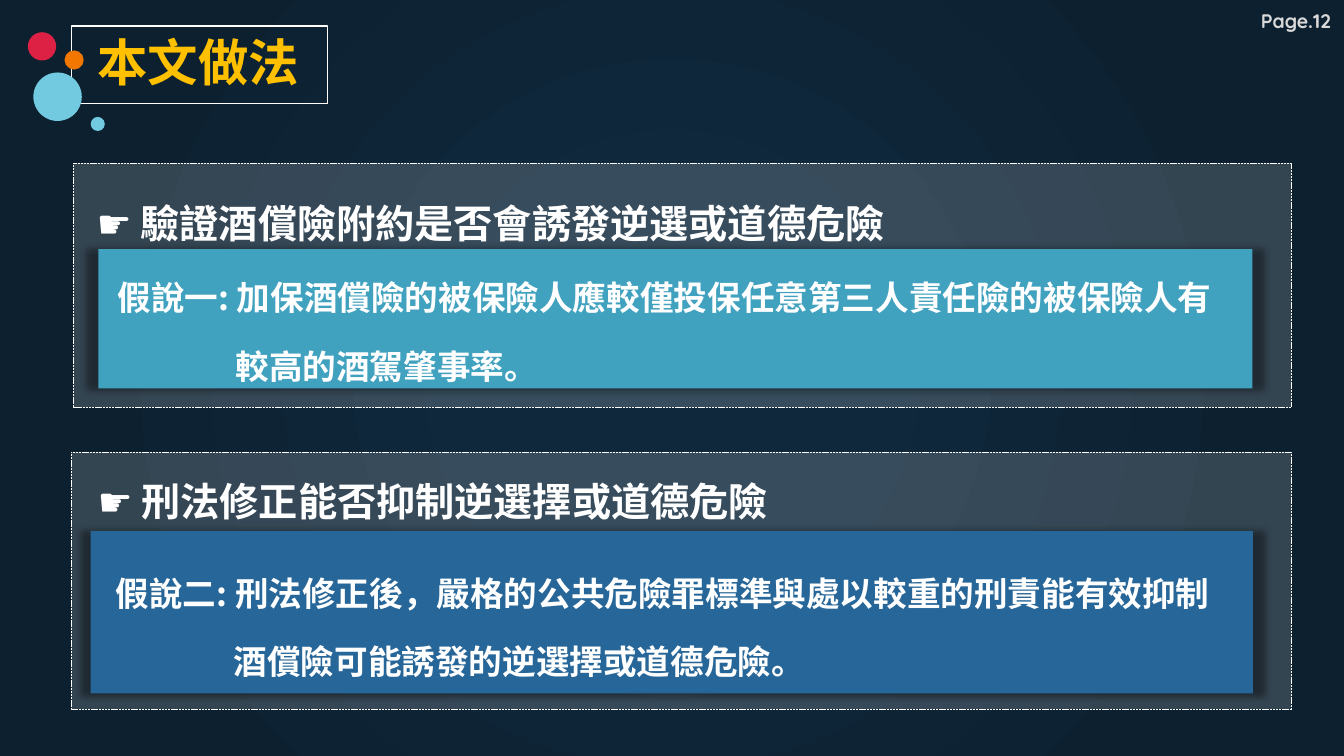
import pptx
import pptx.util
import pptx.dml.color
import pptx.enum.dml
import pptx.enum.shapes
import pptx.enum.text
import pptx.oxml
import pptx.oxml.ns

Pt = pptx.util.Pt
Kind = pptx.enum.shapes.MSO_SHAPE
Fit = pptx.enum.text.MSO_AUTO_SIZE
Dash = pptx.enum.dml.MSO_LINE
qn = pptx.oxml.ns.qn
SPACE = pptx.oxml.ns.nsdecls("a")


def color(code):
    return pptx.dml.color.RGBColor.from_string(code)


def node(text):
    return pptx.oxml.parse_xml(text)


class Pen:
    font = "Noto Sans CJK SC"
    white = "FFFFFF"

    def __init__(self, slide):
        self.slide = slide
        self.home = slide.shapes

    def group(self):
        self.home = self.slide.shapes.add_group_shape().shapes

    def ungroup(self):
        self.home = self.slide.shapes

    def back(self, stops):
        fill = self.slide.background.fill
        fill.solid()
        marks = "".join(
            f'<a:gs pos="{pos * 1000}"><a:srgbClr val="{code}"/></a:gs>'
            for pos, code in stops
        )
        grad = node(
            f'<a:gradFill {SPACE} rotWithShape="1"><a:gsLst>{marks}</a:gsLst>'
            '<a:path path="circle"><a:fillToRect l="50000" t="50000" '
            'r="50000" b="50000"/></a:path></a:gradFill>'
        )
        old = self.slide._element.find(".//" + qn("p:bgPr")).find(qn("a:solidFill"))
        old.getparent().replace(old, grad)

    def shape(self, kind, box, fill=None, alpha=None, line=None, dash=None):
        item = self.home.add_shape(kind, *map(Pt, box))
        item.shadow.inherit = False
        if fill:
            item.fill.solid()
            item.fill.fore_color.rgb = color(fill)
        else:
            item.fill.background()
        if alpha:
            tint = item._element.spPr.find(qn("a:solidFill"))[0]
            tint.append(node(f'<a:alpha {SPACE} val="{alpha * 1000}"/>'))
        if line:
            item.line.color.rgb = color(self.white)
            item.line.width = Pt(line)
        else:
            item.line.fill.background()
        if dash:
            item.line.dash_style = dash
        return item

    def panel(self, box):
        self.shape(Kind.RECTANGLE, box, self.white, 17, 0.5, Dash.SQUARE_DOT)

    def card(self, box, fill):
        item = self.shape(Kind.RECTANGLE, box, fill)
        item._element.spPr.find(qn("a:effectLst")).append(node(
            f'<a:outerShdw {SPACE} blurRad="{Pt(5)}" dist="0" dir="0" '
            'sx="102000" sy="102000" algn="ctr" rotWithShape="0">'
            '<a:srgbClr val="000000"><a:alpha val="40000"/></a:srgbClr>'
            '</a:outerShdw>'
        ))

    def dot(self, left, top, size, fill):
        self.shape(Kind.OVAL, (left, top, size, size), fill)

    def text(self, box, words, size, code=white, font=font, wrap=False,
             lead=None, gap=None, hang=None):
        item = self.home.add_textbox(*map(Pt, box))
        frame = item.text_frame
        frame.word_wrap = wrap
        frame.auto_size = Fit.SHAPE_TO_FIT_TEXT
        para = frame.paragraphs[0]
        para.text = words
        para.font.size = Pt(size)
        para.font.bold = True
        para.font.name = font
        para.font.color.rgb = color(code)
        latin = para._p.find(".//" + qn("a:latin"))
        latin.addnext(node(f'<a:ea {SPACE} typeface="{font}"/>'))
        if lead:
            para.line_spacing = Pt(lead)
        if gap:
            para.space_before = Pt(gap)
        if hang:
            props = para._p.get_or_add_pPr()
            props.set("marL", str(Pt(hang)))
            props.set("indent", str(-Pt(hang)))

    def head(self, box, words, gap=None):
        self.text(box, words, 28, lead=49, gap=gap)

    def claim(self, box, words):
        self.text(box, words, 24, wrap=True, lead=49, gap=6, hang=84.25)


def main():
    deck = pptx.Presentation()
    deck.slide_width = Pt(960)
    deck.slide_height = Pt(540)
    pen = Pen(deck.slides.add_slide(deck.slide_layouts[6]))
    pen.back([(0, "0F283C"), (23, "0F283C"), (69, "0D2232"), (97, "0C202F")])
    pen.text((893.5, 2.9, 90, 24.5), "Page.12", 14, "D9D9D9", "Quicksand", True)

    pen.panel((52.6, 116.6, 869.8, 174.2))
    pen.card((70.2, 178, 824.4, 99.4), "41A2C0")

    pen.group()
    pen.text((62.6, 18.7, 159.8, 51.1), "本文做法", 36, "FFC000")
    pen.shape(Kind.RECTANGLE, (51, 18.7, 182.9, 55.4), line=1)
    for dot in (
        (46.1, 36, 13.7, "F17700"),
        (19.9, 23, 20.2, "DC2144"),
        (64.8, 83.5, 10.1, "71CAE0"),
        (23.8, 51.8, 34.6, "71CAE0"),
    ):
        pen.dot(*dot)
    pen.ungroup()

    pen.claim((77, 174.2, 799.2, 99.4),
              "假說一: 加保酒償險的被保險人應較僅投保任意第三人責任險的被保險人有較高的酒駕肇事率。")
    pen.head((62, 123.1, 584.6, 51.1), "☛ 驗證酒償險附約是否會誘發逆選或道德危險")

    pen.panel((51, 322.8, 871.4, 183.6))
    pen.card((64.8, 379.4, 830.2, 115.9), "276698")
    pen.head((62.6, 321.8, 499.7, 51.1), "☛ 刑法修正能否抑制逆選擇或道德危險", 24)
    pen.claim((75.6, 385.2, 818.6, 99.4),
              "假說二: 刑法修正後，嚴格的公共危險罪標準與處以較重的刑責能有效抑制酒償險可能誘發的逆選擇或道德危險。")
    deck.save("out.pptx")


if __name__ == "__main__":
    main()
